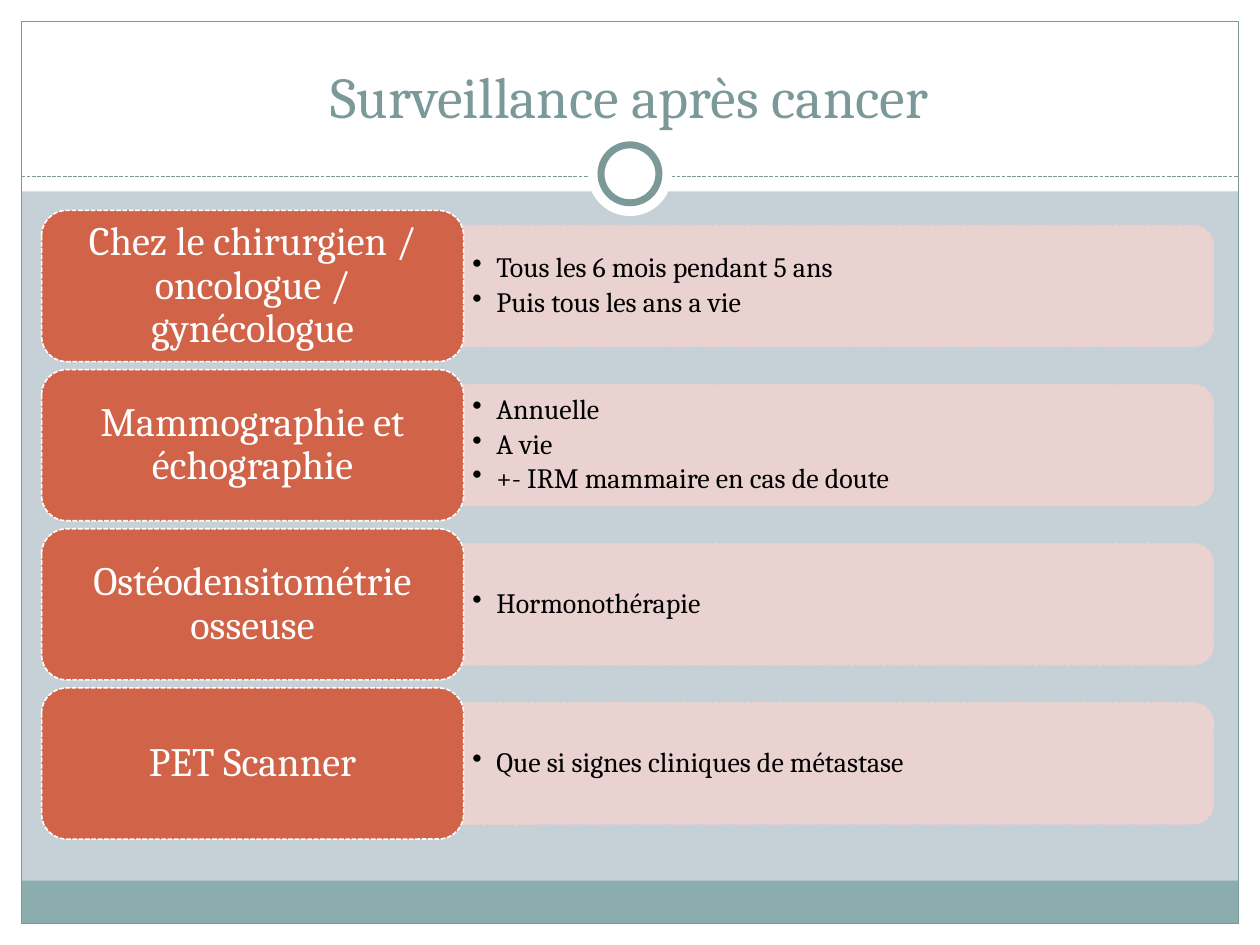
from pptx import Presentation
from pptx.dml.color import RGBColor
from pptx.enum.dml import MSO_LINE
from pptx.enum.shapes import MSO_CONNECTOR, MSO_SHAPE
from pptx.enum.text import MSO_ANCHOR, MSO_AUTO_SIZE, PP_ALIGN
from pptx.oxml.ns import qn
from pptx.util import Inches, Pt
from lxml.etree import SubElement

WHITE = RGBColor(0xFF, 0xFF, 0xFF)
BLACK = RGBColor(0x00, 0x00, 0x00)
MIST = RGBColor(0xC5, 0xD1, 0xD7)
TEAL = RGBColor(0x8C, 0xAD, 0xAE)
SLATE = RGBColor(0x7C, 0x99, 0x9A)
BRICK = RGBColor(0xD1, 0x63, 0x49)
PINK = RGBColor(0xEE, 0xD3, 0xD0)
FONT = "Cambria"

FOLLOW_UPS = [
    ("Chez le chirurgien / oncologue / gynécologue",
     ["Tous les 6 mois pendant 5 ans", "Puis tous les ans a vie"]),
    ("Mammographie et échographie",
     ["Annuelle", "A vie", "+- IRM mammaire en cas de doute"]),
    ("Ostéodensitométrie osseuse", ["Hormonothérapie"]),
    ("PET Scanner", ["Que si signes cliniques de métastase"]),
]


def add_block(page, kind, box, fill=None, line=None, width=0.75, dash=None):
    """Add a shadowless preset shape in a box given in inches."""
    shape = page.shapes.add_shape(kind, *map(Inches, box))
    shape.shadow.inherit = False
    if fill is None:
        shape.fill.background()
    else:
        shape.fill.solid()
        shape.fill.fore_color.rgb = fill
    if line is None:
        shape.line.fill.background()
    else:
        shape.line.color.rgb = line
        shape.line.width = Pt(width)
        shape.line.dash_style = dash
    return shape


def add_span(para, text, size, color):
    """Add one formatted run to a paragraph."""
    span = para.add_run()
    span.text = text
    span.font.name = FONT
    span.font.size = Pt(size)
    span.font.color.rgb = color


def set_frame(frame, anchor, across, down):
    """Set the wrapping, anchor and insets of a text frame."""
    frame.word_wrap = True
    frame.auto_size = MSO_AUTO_SIZE.NONE
    frame.vertical_anchor = anchor
    frame.margin_left = frame.margin_right = Inches(across)
    frame.margin_top = frame.margin_bottom = Inches(down)


def make_translucent(shape, percent):
    """Give the fill and line colours of a shape an opacity."""
    for color in shape._element.spPr.iter(qn("a:srgbClr")):
        SubElement(color, qn("a:alpha"), val=str(percent * 1000))


def add_bullet(para):
    """Give a paragraph a hanging round bullet."""
    properties = para._p.get_or_add_pPr()
    properties.set("marL", str(Inches(0.19)))
    properties.set("indent", str(-Inches(0.19)))
    SubElement(properties, qn("a:buChar"), char="•")


def draw_frame(page, box):
    """Draw the white margins, header, footer band and ring of the page."""
    left, top, width, height = box
    edge, header, band = 0.17, 1.52, 0.34
    inner = width - 2 * edge
    margins = [
        (left, top + height - edge, width, edge),
        (left, top, width, header),
        (left, top, edge, height),
        (left + width - edge, top, edge, height),
    ]
    for margin in margins:
        add_block(page, MSO_SHAPE.RECTANGLE, margin, WHITE)
    footer = (left + edge, top + height - edge - band, inner, band)
    add_block(page, MSO_SHAPE.RECTANGLE, footer, TEAL)
    outline = (left + edge, top + edge, inner, height - 2 * edge)
    add_block(page, MSO_SHAPE.RECTANGLE, outline, line=SLATE)

    rule_y = Inches(top + 1.4)
    rule = page.shapes.add_connector(
        MSO_CONNECTOR.STRAIGHT, Inches(left + edge), rule_y,
        Inches(left + width - edge), rule_y)
    rule.line.color.rgb = SLATE
    rule.line.width = Pt(0.75)
    rule.line.dash_style = MSO_LINE.SQUARE_DOT
    SubElement(rule._element.spPr, qn("a:effectLst"))

    center_x, center_y = left + width / 2, top + 1.38
    for size, line in ((0.67, None), (0.46, SLATE)):
        ring = (center_x - size / 2, center_y - size / 2, size, size)
        add_block(page, MSO_SHAPE.OVAL, ring, WHITE, line, 4)


def place_title(page, box, text):
    """Move the title placeholder above the frame and format it."""
    title = page.shapes.title
    page.shapes._spTree.append(title._element)
    title.left, title.top, title.width, title.height = map(Inches, box)
    set_frame(title.text_frame, MSO_ANCHOR.BOTTOM, 0.1, 0.05)
    para = title.text_frame.paragraphs[0]
    para.alignment = PP_ALIGN.CENTER
    add_span(para, text, 33, SLATE)


def draw_row(page, box, label, details):
    """Draw one label with its panel of bulleted details."""
    left, top, width, height = box
    label_width, panel_height = 3.35, 0.96
    panel_width = width - label_width
    center_x = left + label_width + panel_width / 2
    center_y = top + height / 2

    upright = (center_x - panel_height / 2, center_y - panel_width / 2,
               panel_height, panel_width)
    panel = add_block(page, MSO_SHAPE.ROUND_2_SAME_RECTANGLE, upright,
                      PINK, PINK, 0.9, MSO_LINE.SQUARE_DOT)
    panel.rotation = 90
    make_translucent(panel, 90)

    text_height = 0.87
    text_box = page.shapes.add_textbox(
        Inches(left + label_width), Inches(center_y - text_height / 2),
        Inches(panel_width - 0.05), Inches(text_height))
    frame = text_box.text_frame
    set_frame(frame, MSO_ANCHOR.MIDDLE, 0.07, 0.03)
    for index, detail in enumerate(details):
        para = frame.add_paragraph() if index else frame.paragraphs[0]
        para.line_spacing = 0.9
        para.space_after = Pt(2.5)
        add_bullet(para)
        add_span(para, detail, 16, BLACK)

    tile = add_block(page, MSO_SHAPE.ROUNDED_RECTANGLE,
                     (left, top, label_width, height),
                     BRICK, WHITE, 0.9, MSO_LINE.SQUARE_DOT)
    set_frame(tile.text_frame, MSO_ANCHOR.MIDDLE, 0.1, 0.05)
    para = tile.text_frame.paragraphs[0]
    para.alignment = PP_ALIGN.CENTER
    para.line_spacing = 0.9
    add_span(para, label, 23, WHITE)


def draw_rows(page, box, follow_ups):
    """Spread the follow-up rows evenly down the box."""
    left, top, width, height = box
    row_height = 1.2
    pitch = (height - row_height) / (len(follow_ups) - 1)
    for index, (label, details) in enumerate(follow_ups):
        row = (left, top + index * pitch, width, row_height)
        draw_row(page, row, label, details)


def main():
    """Build and save the deck."""
    deck = Presentation()
    deck.slide_width, deck.slide_height = Inches(10), Inches(7.5)
    page = deck.slides.add_slide(deck.slide_layouts[5])
    page.background.fill.solid()
    page.background.fill.fore_color.rgb = MIST
    draw_frame(page, (0, 0, 10, 7.5))
    place_title(page, (0.33, 0.25, 9.33, 0.83), "Surveillance après cancer")
    draw_rows(page, (0.33, 1.67, 9.3, 4.99), FOLLOW_UPS)
    deck.save("out.pptx")


if __name__ == "__main__":
    main()
